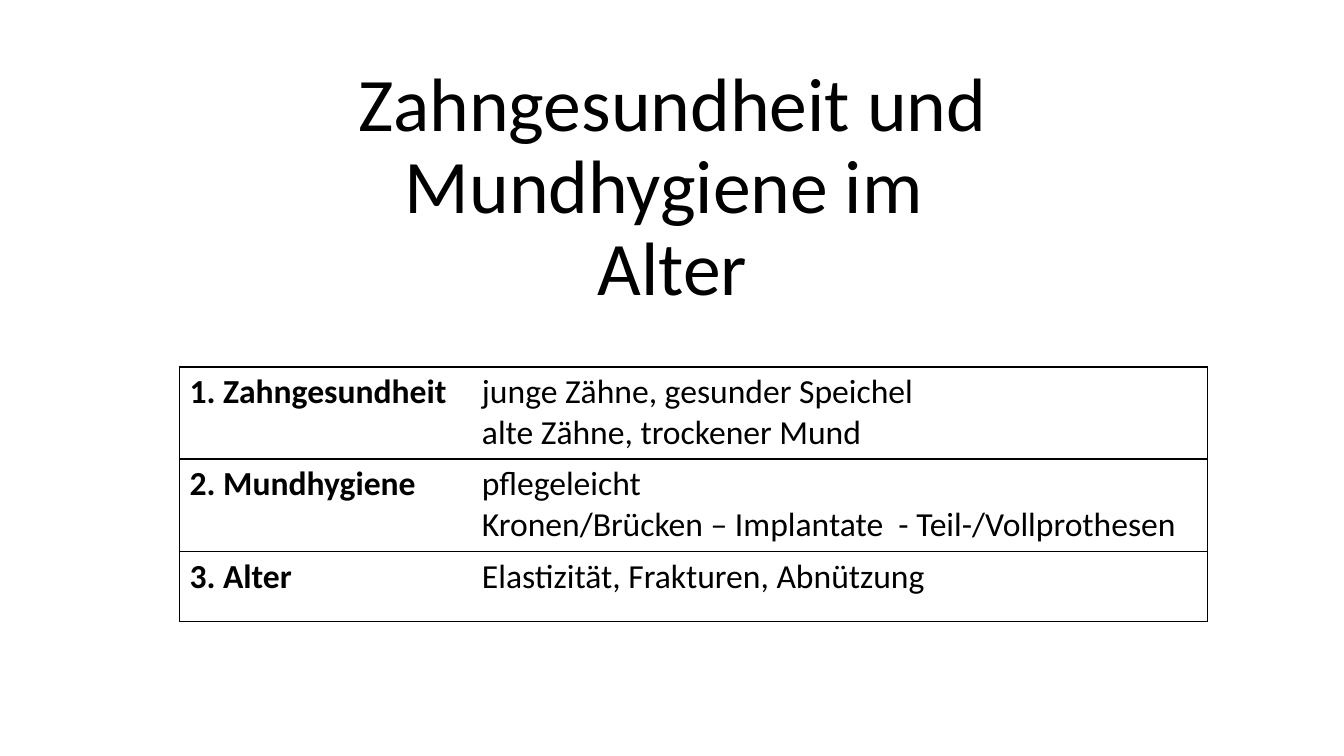
from lxml.etree import SubElement
from pptx import Presentation
from pptx.dml.color import RGBColor
from pptx.enum.text import MSO_ANCHOR as Anchor, MSO_AUTO_SIZE as AutoSize, PP_ALIGN as Align
from pptx.oxml.ns import qn
from pptx.util import Inches, Pt

BLACK = RGBColor(0x00, 0x00, 0x00)
FONT = "Calibri"
TITLE = "Zahngesundheit und Mundhygiene im \vAlter"
TOPICS = [
    ("1. Zahngesundheit", "junge Zähne, gesunder Speichel \valte Zähne, trockener Mund"),
    ("2. Mundhygiene", "pflegeleicht\vKronen/Brücken – Implantate  - Teil-/Vollprothesen"),
    ("3. Alter", "Elastizität, Frakturen, Abnützung"),
]
COLUMN_WIDTHS = [2.9, 7.3]
ROW_HEIGHTS = [0.91, 0.91, 0.7]


def style_font(para, size, bold=False):
    para.font.name = FONT
    para.font.size = Pt(size)
    para.font.bold = bold
    para.font.color.rgb = BLACK


def set_borders(cell, visible_sides):
    properties = cell._tc.get_or_add_tcPr()
    for side in "LRTB":
        line = SubElement(properties, qn(f"a:ln{side}"), w=str(Pt(1)))
        if side in visible_sides:
            fill = SubElement(line, qn("a:solidFill"))
            SubElement(fill, qn("a:srgbClr"), val=str(BLACK))
        else:
            SubElement(line, qn("a:noFill"))


def add_title(page, left, top, width, height):
    title = page.shapes.title
    title.left, title.top = Inches(left), Inches(top)
    title.width, title.height = Inches(width), Inches(height)
    frame = title.text_frame
    frame.text = TITLE
    frame.word_wrap = True
    frame.auto_size = AutoSize.NONE
    frame.vertical_anchor = Anchor.BOTTOM
    para = frame.paragraphs[0]
    para.alignment = Align.CENTER
    para.line_spacing = 0.9
    style_font(para, 54)


def add_topic_table(page, left, top):
    table = page.shapes.add_table(
        len(TOPICS), len(COLUMN_WIDTHS), Inches(left), Inches(top),
        Inches(sum(COLUMN_WIDTHS)), Inches(sum(ROW_HEIGHTS)),
    ).table
    table.first_row = False
    table.horz_banding = False
    for column, width in zip(table.columns, COLUMN_WIDTHS):
        column.width = Inches(width)
    for row, height, topic in zip(table.rows, ROW_HEIGHTS, TOPICS):
        row.height = Inches(height)
        for cell, text, sides, bold in zip(row.cells, topic, ("LTB", "RTB"), (True, False)):
            cell.text = text
            style_font(cell.text_frame.paragraphs[0], 24, bold)
            set_borders(cell, sides)
            cell.fill.background()


def main():
    deck = Presentation()
    deck.slide_width, deck.slide_height = Inches(13.33), Inches(7.5)
    page = deck.slides.add_slide(deck.slide_layouts.get_by_name("Title Only"))
    add_title(page, 1.67, 0.53, 10, 2.61)
    add_topic_table(page, 1.78, 3.64)
    deck.save("out.pptx")


if __name__ == "__main__":
    main()
